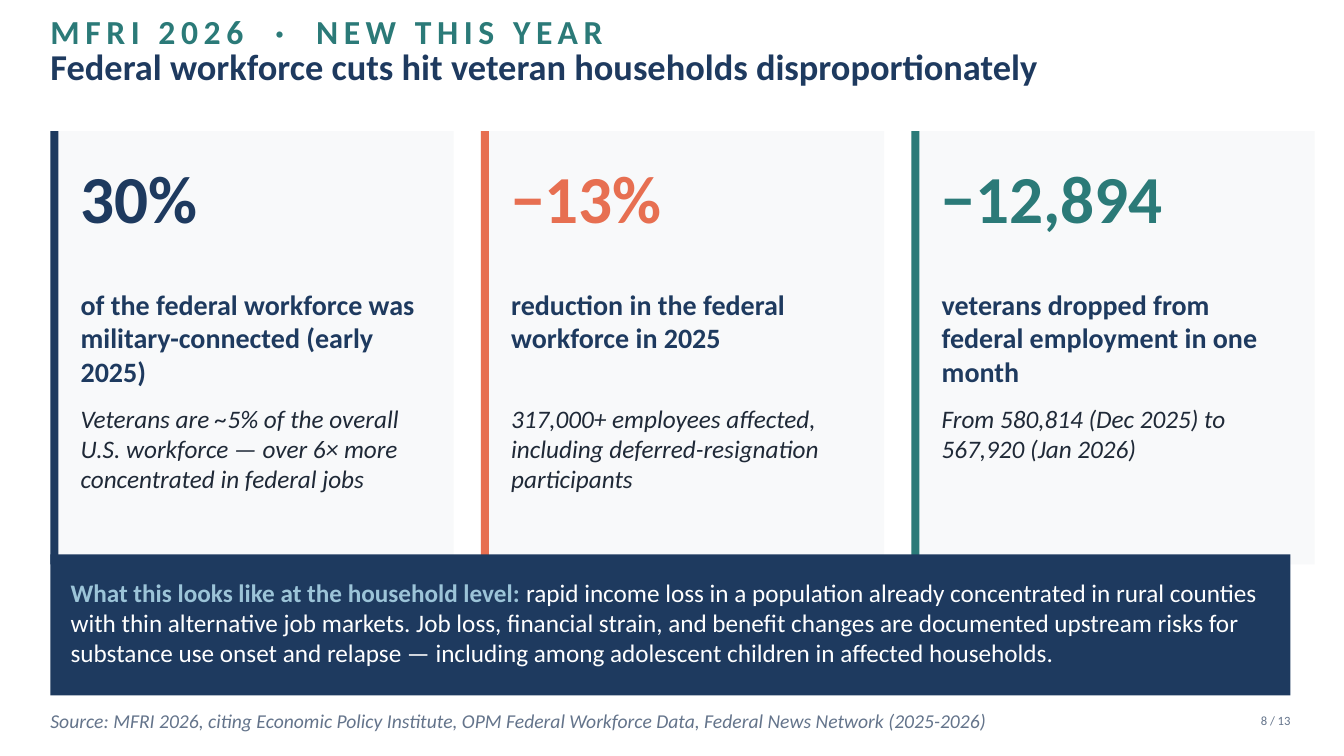
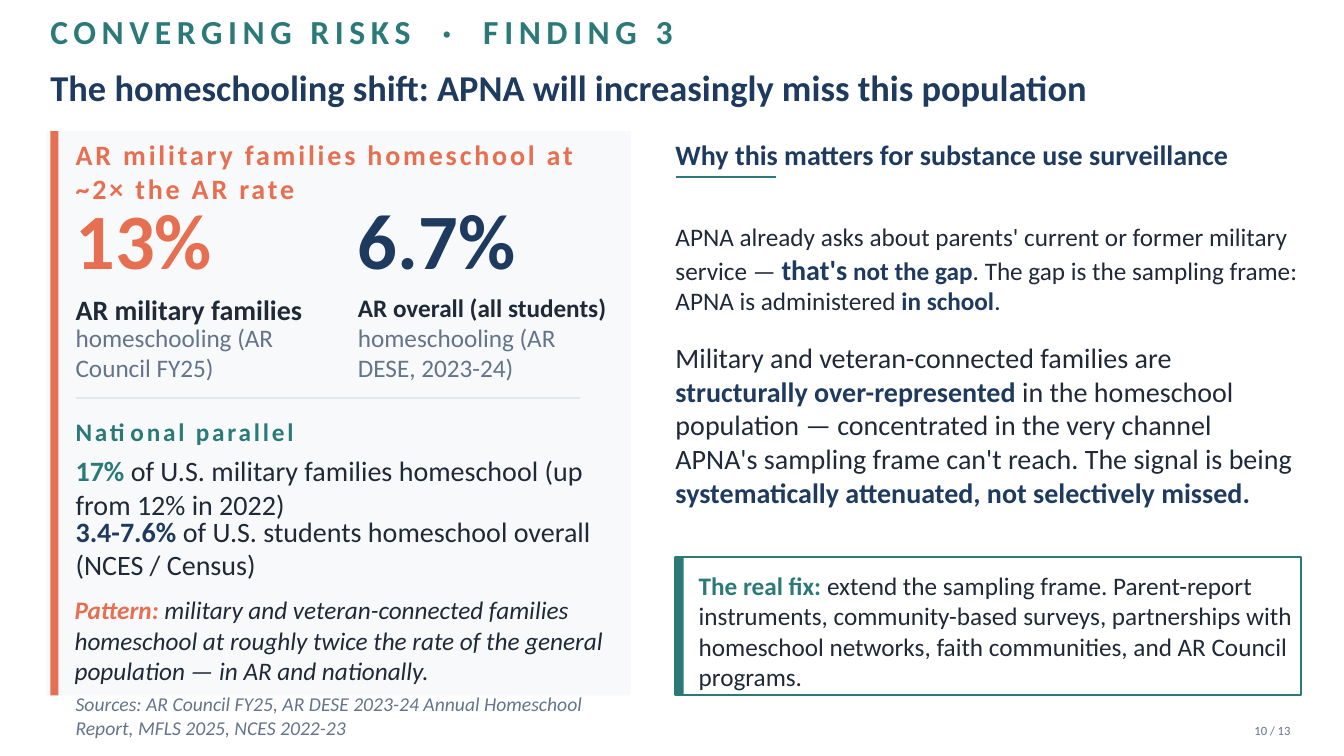
from collections import namedtuple
from lxml.etree import SubElement
from pptx import Presentation
from pptx.dml.color import RGBColor
from pptx.enum.shapes import MSO_CONNECTOR, MSO_SHAPE
from pptx.enum.text import MSO_ANCHOR, MSO_AUTO_SIZE, PP_ALIGN
from pptx.oxml.ns import qn
from pptx.util import Inches, Pt

COLORS = {
    "navy": "1E3A5F",
    "teal": "2B7A78",
    "coral": "E76F51",
    "ink": "1F2937",
    "slate": "64748B",
    "sky": "9CC4D8",
    "rule": "E2E8F0",
    "panel": "F8F9FA",
    "white": "FFFFFF",
}
FONT = "Calibri"
MARGIN = 0.5
CONTENT_WIDTH = 12.3
CONTENT_TOP = 1.3
CONTENT_BOTTOM = 6.9
STRIPE = 0.08

Box = namedtuple("Box", "left top width height")
Span = namedtuple("Span", "text size color bold italic spacing", defaults=(False, False, 0))


def color(name):
    return RGBColor.from_string(COLORS[name])


def inside(box, left, top, width, height):
    """Box placed by its offset from the corner of another box."""
    return Box(box.left + left, box.top + top, width, height)


# Shared drawing helpers
def fill_text(shape, spans, anchor=MSO_ANCHOR.TOP, align=PP_ALIGN.LEFT):
    frame = shape.text_frame
    frame.word_wrap = True
    frame.auto_size = MSO_AUTO_SIZE.NONE
    frame.vertical_anchor = anchor
    frame.margin_left = frame.margin_top = frame.margin_right = frame.margin_bottom = 0
    para = frame.paragraphs[0]
    para.alignment = align
    for span in spans:
        run = para.add_run()
        run.text = span.text
        run.font.name = FONT
        run.font.size = Pt(span.size)
        run.font.bold = span.bold
        run.font.italic = span.italic
        run.font.color.rgb = color(span.color)
        if span.spacing:
            run.font._element.set("spc", str(span.spacing * 100))


def add_text(page, box, *spans, middle=False, align=PP_ALIGN.LEFT):
    shape = page.shapes.add_textbox(*map(Inches, box))
    fill_text(shape, spans, MSO_ANCHOR.MIDDLE if middle else MSO_ANCHOR.TOP, align)


def add_block(page, box, fill, outline=None):
    shape = page.shapes.add_shape(MSO_SHAPE.RECTANGLE, *map(Inches, box))
    shape.shadow.inherit = False
    shape.fill.solid()
    shape.fill.fore_color.rgb = color(fill)
    if outline:
        shape.line.color.rgb = color(outline)
        shape.line.width = Pt(1.5)
    else:
        shape.line.fill.background()


def add_stripe(page, box, fill):
    add_block(page, box._replace(width=STRIPE), fill)


def add_rule(page, left, top, length, line_color, weight):
    line = page.shapes.add_connector(
        MSO_CONNECTOR.STRAIGHT, *map(Inches, (left, top, left + length, top)))
    line.line.color.rgb = color(line_color)
    line.line.width = Pt(weight)
    SubElement(line._element.spPr, qn("a:effectLst"))


# Page frame: eyebrow, title, page number
def add_page(deck, eyebrow, title, title_top, number, number_top):
    page = deck.slides.add_slide(deck.slide_layouts[5])
    page.background.fill.solid()
    page.background.fill.fore_color.rgb = color("white")
    heading = page.shapes.title
    heading.left, heading.top, heading.width, heading.height = map(
        Inches, (MARGIN, title_top, CONTENT_WIDTH, 0.6))
    fill_text(heading, [Span(title, 26, "navy", True)], MSO_ANCHOR.MIDDLE)
    add_text(page, Box(MARGIN, 0.18, 12, 0.25),
             Span(eyebrow, 24, "teal", True, spacing=4), middle=True)
    add_text(page, Box(MARGIN + CONTENT_WIDTH - 1.3, number_top, 1.3, 0.3),
             Span(f"{number} / 13", 9, "slate"), middle=True, align=PP_ALIGN.RIGHT)
    return page


def add_source(page, box, text):
    add_text(page, box, Span(text, 14, "slate", italic=True), middle=True)


# Regions of the workforce slide
def add_stat_card(page, box, accent, figure, label, detail):
    add_block(page, box, "panel")
    add_stripe(page, box, accent)
    rows = (
        (0.25, 1.2, Span(figure, 48, accent, True)),
        (1.55, 1, Span(label, 20, "navy", True)),
        (2.7, 1.5, Span(detail, 18, "ink", italic=True)),
    )
    for top, height, span in rows:
        add_text(page, inside(box, 0.3, top, box.width - 0.5, height), span)


def add_household_band(page, box):
    add_block(page, box, "navy")
    add_text(
        page, inside(box, 0.2, 0.25, box.width - 0.3, 0.85),
        Span("What this looks like at the household level: ", 18, "sky", True),
        Span("rapid income loss in a population already concentrated in rural counties "
             "with thin alternative job markets. Job loss, financial strain, and benefit "
             "changes are documented upstream risks for substance use onset and relapse — "
             "including among adolescent children in affected households.", 18, "white"),
        middle=True)


def build_workforce(deck):
    page = add_page(deck, "MFRI 2026  ·  NEW THIS YEAR",
                    "Federal workforce cuts hit veteran households disproportionately",
                    0.35, 8, 7)
    cards = (
        ("navy", "30%", "of the federal workforce was military-connected (early 2025)",
         "Veterans are ~5% of the overall U.S. workforce — over 6× more concentrated "
         "in federal jobs"),
        ("coral", "−13%", "reduction in the federal workforce in 2025",
         "317,000+ employees affected, including deferred-resignation participants"),
        ("teal", "−12,894", "veterans dropped from federal employment in one month",
         "From 580,814 (Dec 2025) to 567,920 (Jan 2026)"),
    )
    card_width, gap = 4, 0.27
    for column, card in enumerate(cards):
        left = MARGIN + column * (card_width + gap)
        add_stat_card(page, Box(left, CONTENT_TOP, card_width, 4.3), *card)
    add_household_band(page, Box(MARGIN, CONTENT_BOTTOM - 1.4, CONTENT_WIDTH, 1.4))
    add_source(page, Box(MARGIN, 7, CONTENT_WIDTH, 0.3),
               "Source: MFRI 2026, citing Economic Policy Institute, OPM Federal Workforce "
               "Data, Federal News Network (2025-2026)")


# Regions of the homeschooling slide
def add_rate(page, box, figure, accent, group, group_size, note):
    add_text(page, inside(box, 0, 0, box.width, 1), Span(figure, 56, accent, True))
    add_text(page, inside(box, 0, 1, box.width, 0.35), Span(group, group_size, "ink", True))
    add_text(page, inside(box, 0, 1.3, box.width, 0.5), Span(note, 18, "slate"))


def add_evidence_panel(page, box):
    indent, text_width = 0.25, 5.4
    add_block(page, Box(box.left - 0.04, box.top, 5.8, box.height), "panel")
    add_stripe(page, box, "coral")
    add_text(page, inside(box, indent, 0.2, text_width, 0.4),
             Span("AR military families homeschool at ~2× the AR rate", 20, "coral", True,
                  spacing=2), middle=True)

    # State rates, side by side
    rates = (
        ("13%", "coral", "AR military families", 20, "homeschooling (AR Council FY25)"),
        ("6.7%", "navy", "AR overall (all students)", 18, "homeschooling (AR DESE, 2023-24)"),
    )
    for column, rate in enumerate(rates):
        add_rate(page, inside(box, indent + column * 2.8, 0.6, 2.5, 1.8), *rate)
    add_rule(page, box.left + indent, box.top + 2.65, 5, "rule", 1)

    # National rates, one under the other
    add_text(page, inside(box, indent, 2.8, text_width, 0.35),
             Span("National parallel", 18, "teal", True, spacing=2), middle=True)
    facts = (
        ("17%", "teal", " of U.S. military families homeschool (up from 12% in 2022)"),
        ("3.4-7.6%", "navy", " of U.S. students homeschool overall (NCES / Census)"),
    )
    for row, (figure, accent, text) in enumerate(facts):
        add_text(page, inside(box, indent, 3.2 + row * 0.6, text_width, 0.6),
                 Span(figure, 20, accent, True), Span(text, 20, "ink"))

    # Closing pattern and sources
    add_block(page, inside(box, 0.15, 4.55, 5.6, 0.9), "panel")
    add_text(page, inside(box, 0.24, 4.6, 5.3, 0.85),
             Span("Pattern: ", 18, "coral", True, True),
             Span("military and veteran-connected families homeschool at roughly twice the "
                  "rate of the general population — in AR and nationally.", 18, "ink",
                  italic=True))
    add_source(page, inside(box, indent, box.height + 0.05, text_width, 0.3),
               "Sources: AR Council FY25, AR DESE 2023-24 Annual Homeschool Report, "
               "MFLS 2025, NCES 2022-23")


def add_argument(page, box):
    add_text(page, inside(box, 0, 0.01, box.width, 0.45),
             Span("Why this matters for substance use surveillance", 20, "navy", True),
             middle=True)
    add_rule(page, box.left, box.top + 0.46, 1, "teal", 1.5)
    add_text(
        page, inside(box, 0, 0.9, box.width, 0.91),
        Span("APNA already asks about parents' current or former military service — ",
             18, "ink"),
        Span("that's", 20, "navy", True),
        Span(" not the gap", 18, "navy", True),
        Span(". The gap is the sampling frame: APNA is administered ", 18, "ink"),
        Span("in school", 18, "navy", True),
        Span(".", 18, "ink"))
    add_text(
        page, inside(box, 0, 2.08, box.width, 1.8),
        Span("Military and veteran-connected families are ", 20, "ink"),
        Span("structurally over-represented", 20, "navy", True),
        Span(" in the homeschool population — concentrated in the very channel APNA's "
             "sampling frame can't reach. The signal is being ", 20, "ink"),
        Span("systematically attenuated, not selectively missed.", 20, "navy", True))


def add_fix_callout(page, box):
    add_block(page, box, "white", outline="teal")
    add_stripe(page, box, "teal")
    add_text(
        page, inside(box, 0.23, 0.13, box.width - 0.25, 1.05),
        Span("The real fix: ", 18, "teal", True),
        Span("extend the sampling frame. Parent-report instruments, community-based surveys, "
             "partnerships with homeschool networks, faith communities, and AR Council "
             "programs.", 18, "ink"))


def build_homeschooling(deck):
    page = add_page(deck, "CONVERGING RISKS  ·  FINDING 3",
                    "The homeschooling shift: APNA will increasingly miss this population",
                    0.56, 10, 7.1)
    right_left, right_width, callout_height = 6.7, 6.2, 1.37
    height = CONTENT_BOTTOM - CONTENT_TOP
    callout_top = CONTENT_BOTTOM - callout_height
    add_evidence_panel(page, Box(MARGIN, CONTENT_TOP, 5.76, height))
    add_argument(page, Box(right_left, CONTENT_TOP, right_width, callout_top - CONTENT_TOP))
    add_fix_callout(page, Box(right_left, callout_top, right_width, callout_height))


def main():
    deck = Presentation()
    deck.slide_width, deck.slide_height = Inches(13.33), Inches(7.5)
    build_workforce(deck)
    build_homeschooling(deck)
    deck.save("out.pptx")


if __name__ == "__main__":
    main()
